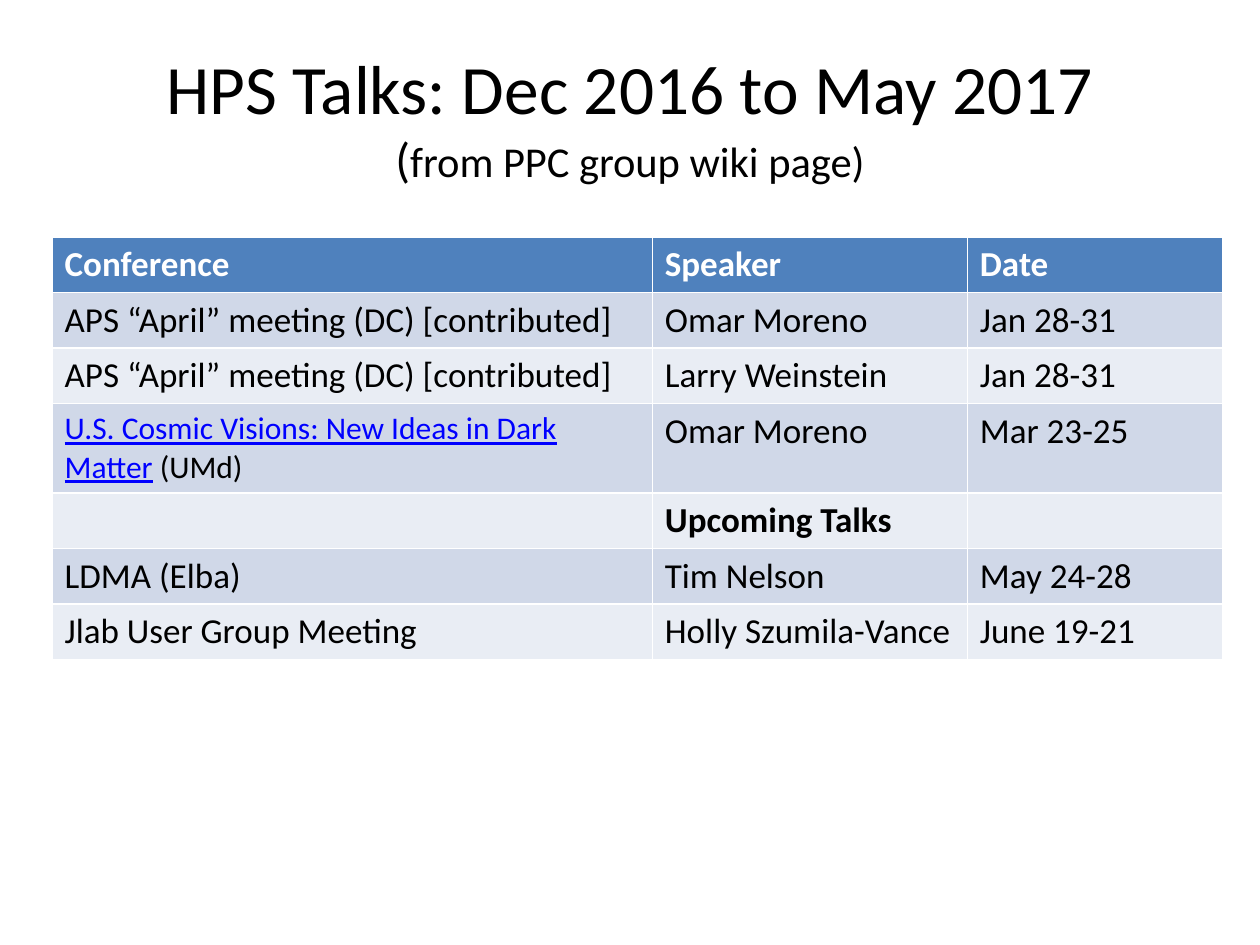
"""Build the slide listing the HPS talks from December 2016 to May 2017."""
from dataclasses import dataclass

from pptx import Presentation
from pptx.dml.color import RGBColor
from pptx.enum.text import MSO_ANCHOR, MSO_AUTO_SIZE, PP_ALIGN
from pptx.slide import Slide
from pptx.table import _Cell
from pptx.text.text import _Paragraph
from pptx.util import Cm, Pt

BLACK = RGBColor(0x00, 0x00, 0x00)
WHITE = RGBColor(0xFF, 0xFF, 0xFF)
LINK_BLUE = RGBColor(0x00, 0x00, 0xFF)
HEADER_BLUE = RGBColor(0x4F, 0x81, 0xBD)
BANDS = (RGBColor(0xD0, 0xD8, 0xE8), RGBColor(0xE9, 0xED, 0xF4))

HEADINGS = ("Conference", "Speaker", "Date")
COLUMN_WIDTHS = (Cm(12.1), Cm(6.35), Cm(5.15))
ROW_HEIGHT = Cm(1.03)


@dataclass(frozen=True)
class Talk:
    conference: str
    speaker: str
    date: str
    linked_title: str = ""
    bold: bool = False


APS_MEETING = "APS “April” meeting (DC) [contributed]"
TALKS = (
    Talk(APS_MEETING, "Omar Moreno", "Jan 28-31"),
    Talk(APS_MEETING, "Larry Weinstein", "Jan 28-31"),
    Talk(" (UMd)", "Omar Moreno", "Mar 23-25",
         linked_title="U.S. Cosmic Visions: New Ideas in Dark Matter"),
    Talk("", "Upcoming Talks", "", bold=True),
    Talk("LDMA (Elba)", "Tim Nelson", "May 24-28"),
    Talk("Jlab User Group Meeting", "Holly Szumila-Vance", "June 19-21"),
)


def add_text(paragraph: _Paragraph, text: str, *, size: float = 20,
             color: RGBColor = BLACK, bold: bool = False,
             underline: bool = False) -> None:
    """Append one formatted run to a paragraph."""
    run = paragraph.add_run()
    run.text = text
    run.font.name = "Calibri"
    run.font.size = Pt(size)
    run.font.color.rgb = color
    run.font.bold = bold
    run.font.underline = underline


def fill_cell(cell: _Cell, color: RGBColor) -> _Paragraph:
    """Colour a cell and return its paragraph."""
    cell.fill.solid()
    cell.fill.fore_color.rgb = color
    return cell.text_frame.paragraphs[0]


def write_title(slide: Slide) -> None:
    """Write the heading and its source line in the title placeholder."""
    title = slide.shapes.title
    title.left, title.top = Cm(1.27), Cm(0.76)
    title.width, title.height = Cm(22.86), Cm(3.18)
    frame = title.text_frame
    frame.auto_size = MSO_AUTO_SIZE.NONE
    frame.vertical_anchor = MSO_ANCHOR.MIDDLE
    heading = frame.paragraphs[0]
    heading.alignment = PP_ALIGN.CENTER
    add_text(heading, "HPS Talks: Dec 2016 to May 2017", size=39.6)
    heading.add_line_break()
    add_text(heading, "(", size=27.9)
    add_text(heading, "from PPC group wiki page)", size=24.3)


def draw_talks(slide: Slide) -> None:
    """Draw the table of talks with banded rows."""
    row_count = len(TALKS) + 1
    talks_table = slide.shapes.add_table(
        row_count, len(HEADINGS), Cm(1.05), Cm(4.78),
        sum(COLUMN_WIDTHS), ROW_HEIGHT * row_count).table
    for column, width in zip(talks_table.columns, COLUMN_WIDTHS):
        column.width = width
    for row in talks_table.rows:
        row.height = ROW_HEIGHT

    for column, heading in enumerate(HEADINGS):
        paragraph = fill_cell(talks_table.cell(0, column), HEADER_BLUE)
        add_text(paragraph, heading, color=WHITE, bold=True)

    for index, talk in enumerate(TALKS):
        details = (talk.conference, talk.speaker, talk.date)
        for column, detail in enumerate(details):
            paragraph = fill_cell(talks_table.cell(index + 1, column),
                                  BANDS[index % len(BANDS)])
            has_link = column == 0 and bool(talk.linked_title)
            if has_link:
                add_text(paragraph, talk.linked_title, size=18,
                         color=LINK_BLUE, underline=True)
            if detail:
                add_text(paragraph, detail, size=18 if has_link else 20,
                         bold=talk.bold)


def main() -> None:
    """Create and save the presentation."""
    presentation = Presentation()
    presentation.slide_width, presentation.slide_height = Cm(25.4), Cm(19.05)
    slide = presentation.slides.add_slide(presentation.slide_layouts[5])
    write_title(slide)
    draw_talks(slide)
    presentation.save("out.pptx")


if __name__ == "__main__":
    main()
